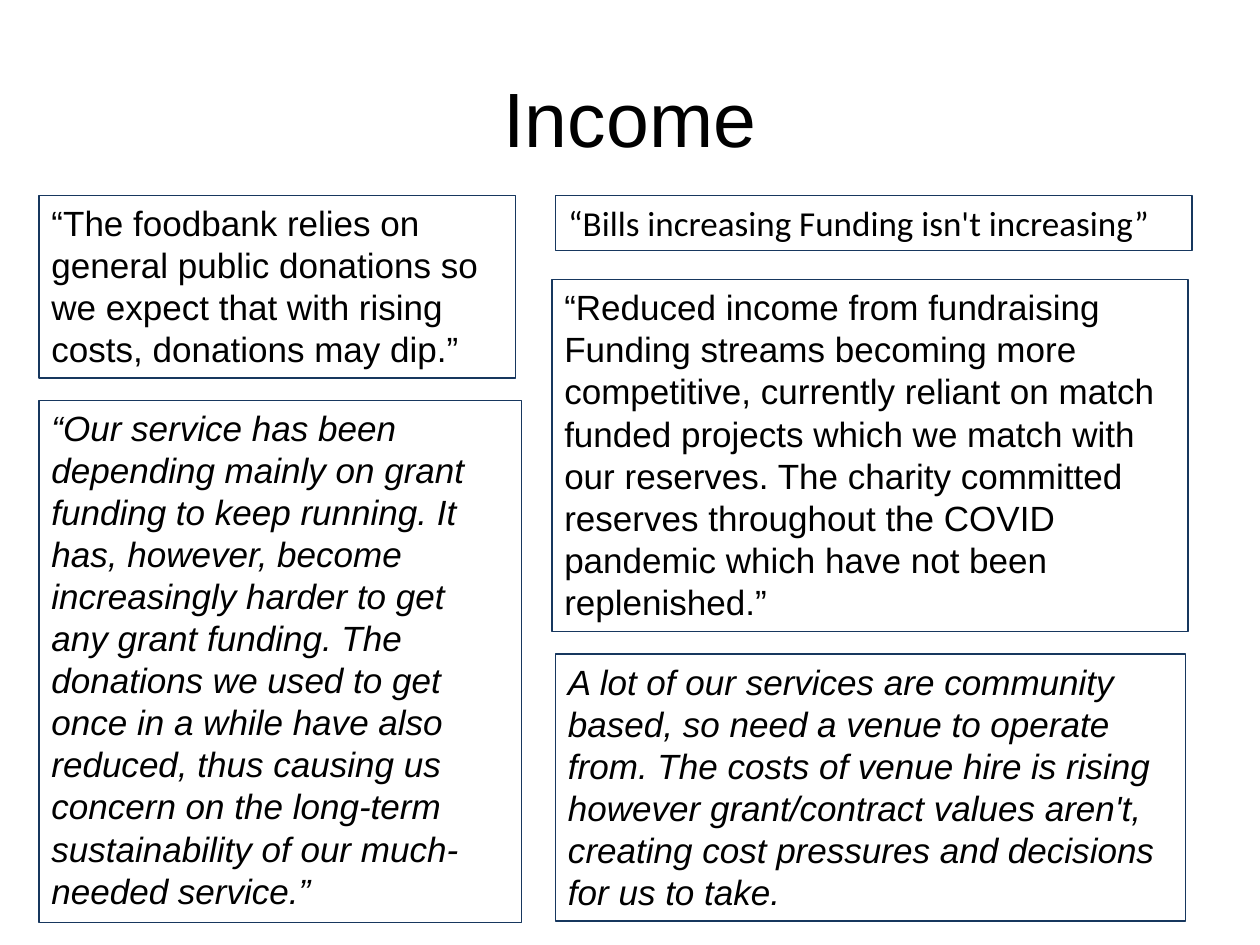
from pptx import Presentation
from pptx import util as u
from pptx.dml.color import RGBColor
from pptx.enum import shapes, text

COLORS = {"text": "000000", "border": "17375E"}

LEFT_QUOTES = [
    ("“The foodbank relies on general public donations so we expect that with "
     "rising costs, donations may dip.”", (0.31, 1.55, 3.78, 1.45), {}),
    ("“Our service has been depending mainly on grant funding to keep running. "
     "It has, however, become increasingly harder to get any grant funding. "
     "The donations we used to get once in a while have also reduced, thus "
     "causing us concern on the long-term sustainability of our much-needed "
     "service.”", (0.31, 3.18, 3.83, 4.14), {"italic": True}),
]
RIGHT_QUOTES = [
    ("“Bills increasing Funding isn't increasing”",
     (4.41, 1.55, 5.05, 0.44), {"font": "Calibri"}),
    ("“Reduced income from fundraising Funding streams becoming more "
     "competitive, currently reliant on match funded projects which we match "
     "with our reserves. The charity committed reserves throughout the COVID "
     "pandemic which have not been replenished.”",
     (4.38, 2.22, 5.05, 2.79), {}),
    ("A lot of our services are community based, so need a venue to operate "
     "from. The costs of venue hire is rising however grant/contract values "
     "aren't, creating cost pressures and decisions for us to take.",
     (4.41, 5.19, 5, 2.12), {"italic": True}),
]


def write(frame, content, *, size=20, font="Arial", italic=False,
          align=text.PP_ALIGN.LEFT, anchor=text.MSO_ANCHOR.TOP):
    frame.word_wrap = True
    frame.vertical_anchor = anchor
    paragraph = frame.paragraphs[0]
    paragraph.alignment = align
    run = paragraph.add_run()
    run.text = content
    run.font.size = u.Pt(size)
    run.font.name = font
    run.font.italic = italic
    run.font.color.rgb = RGBColor.from_string(COLORS["text"])


class SlideBuilder:
    def __init__(self, slide, colors):
        self.slide = slide
        self.colors = colors

    def title(self, content, box):
        shape = self.slide.shapes.add_textbox(*map(u.Inches, box))
        write(shape.text_frame, content, size=44,
              align=text.PP_ALIGN.CENTER, anchor=text.MSO_ANCHOR.MIDDLE)

    def quote(self, content, box, **style):
        shape = self.slide.shapes.add_shape(
            shapes.MSO_SHAPE.RECTANGLE, *map(u.Inches, box))
        shape.shadow.inherit = False
        shape.fill.background()
        shape.line.color.rgb = RGBColor.from_string(self.colors["border"])
        shape.line.width = u.Pt(0.75)
        write(shape.text_frame, content, **style)
        shape.text_frame.auto_size = text.MSO_AUTO_SIZE.SHAPE_TO_FIT_TEXT


def main():
    presentation = Presentation()
    presentation.slide_width = u.Inches(10)
    presentation.slide_height = u.Inches(7.5)
    slide = presentation.slides.add_slide(presentation.slide_layouts[6])
    builder = SlideBuilder(slide, COLORS)
    builder.title("Income", (0.5, 0.3, 9, 1.25))
    for content, box, style in LEFT_QUOTES + RIGHT_QUOTES:
        builder.quote(content, box, **style)
    presentation.save("out.pptx")


if __name__ == "__main__":
    main()
